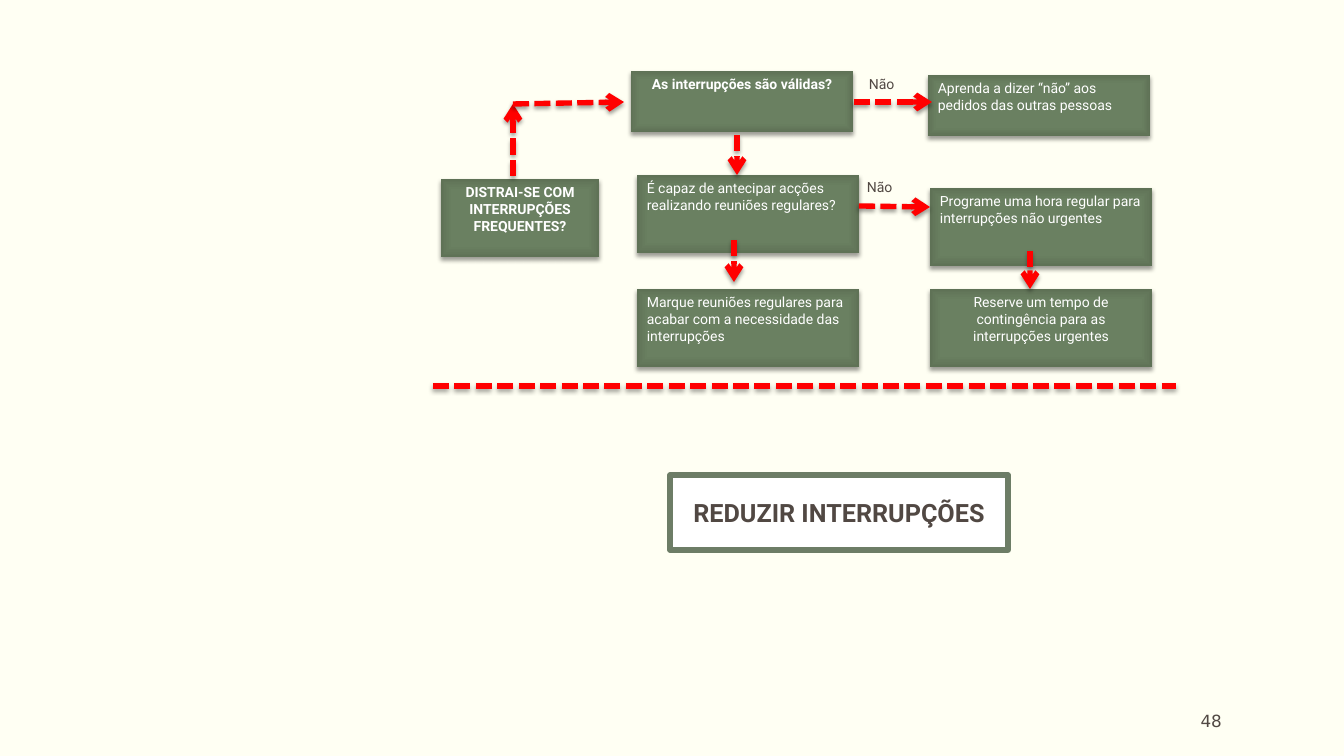
import lxml.etree
import pptx
import pptx.dml.color
import pptx.enum.dml
import pptx.enum.shapes
import pptx.enum.text
import pptx.oxml
import pptx.oxml.ns
import pptx.util

RGBColor = pptx.dml.color.RGBColor
Align = pptx.enum.text.PP_ALIGN
Anchor = pptx.enum.text.MSO_ANCHOR
qn = pptx.oxml.ns.qn

CREAM = RGBColor(0xFF, 0xFF, 0xF3)
BROWN = RGBColor(0x51, 0x48, 0x43)
WHITE = RGBColor(0xFF, 0xFF, 0xFF)
RED = RGBColor(0xFF, 0x00, 0x00)
SAGE = RGBColor(0x6D, 0x7D, 0x66)
GREEN_STOPS = (
    (0, RGBColor(0x6B, 0x81, 0x62)),
    (71, RGBColor(0x6A, 0x80, 0x61)),
    (100, RGBColor(0x5F, 0x72, 0x56)),
)

PAGE_WIDTH, PAGE_HEIGHT = 1344, 756
EMU_PER_PX = 12192000 / PAGE_WIDTH


def px(length):
    return pptx.util.Emu(round(length * EMU_PER_PX))


def write(frame, text, size=10, font="Roboto", color=WHITE, bold=False,
          align=Align.LEFT, anchor=Anchor.TOP, wrap=True):
    frame.word_wrap = wrap
    frame.vertical_anchor = anchor
    para = frame.paragraphs[0]
    para.alignment = align
    span = para.add_run()
    span.text = text
    span.font.size = pptx.util.Pt(size)
    span.font.name = font
    span.font.bold = bold
    span.font.color.rgb = color


def add_shadow(properties):
    effects = properties.find(qn("a:effectLst"))
    if effects is None:
        effects = lxml.etree.SubElement(properties, qn("a:effectLst"))
    shadow = lxml.etree.SubElement(
        effects, qn("a:outerShdw"), blurRad="39370", dist="25400",
        dir="5400000", rotWithShape="0")
    color = lxml.etree.SubElement(shadow, qn("a:srgbClr"), val="000000")
    lxml.etree.SubElement(color, qn("a:alpha"), val="38000")


def green_gradient():
    stops = "".join(
        f'<a:gs pos="{place * 1000}"><a:srgbClr val="{color}"/></a:gs>'
        for place, color in GREEN_STOPS)
    return pptx.oxml.parse_xml(
        f'<a:gradFill {pptx.oxml.ns.nsdecls("a")} rotWithShape="1">'
        f'<a:gsLst>{stops}</a:gsLst><a:path path="rect">'
        '<a:fillToRect l="50000" t="50000" r="50000" b="50000"/>'
        '</a:path></a:gradFill>')


class FlowSlide:
    """Draws the parts of the flowchart on one page in a shared style."""

    def __init__(self, deck):
        self.page = deck.slides.add_slide(deck.slide_layouts[6])
        self.page.background.fill.solid()
        self.page.background.fill.fore_color.rgb = CREAM

    def rectangle(self, *place):
        box = self.page.shapes.add_shape(
            pptx.enum.shapes.MSO_SHAPE.RECTANGLE, *map(px, place))
        box.shadow.inherit = False
        return box

    def step(self, text, left, top, width=222, height=78, **style):
        box = self.rectangle(left, top, width, height)
        box.line.fill.background()
        properties = box._element.spPr
        properties.find(qn("a:prstGeom")).addnext(green_gradient())
        add_shadow(properties)
        write(box.text_frame, text, **style)

    def title(self, text, *place):
        box = self.rectangle(*place)
        box.fill.solid()
        box.fill.fore_color.rgb = WHITE
        box.line.color.rgb = SAGE
        box.line.width = pptx.util.Pt(3.78)
        write(box.text_frame, text, size=18, color=BROWN, bold=True,
              align=Align.CENTER, anchor=Anchor.MIDDLE)

    def dashes(self, x1, y1, x2, y2, arrow=True):
        line = self.page.shapes.add_connector(
            pptx.enum.shapes.MSO_CONNECTOR.STRAIGHT,
            *map(px, (x1, y1, x2, y2)))
        line.line.color.rgb = RED
        line.line.width = pptx.util.Pt(3.82)
        line.line.dash_style = pptx.enum.dml.MSO_LINE.SQUARE_DOT
        properties = line._element.spPr
        if arrow:
            lxml.etree.SubElement(
                properties.find(qn("a:ln")), qn("a:tailEnd"), type="arrow")
        add_shadow(properties)

    def label(self, text, *place, inset=10, **style):
        box = self.page.shapes.add_textbox(*map(px, place))
        box.text_frame.margin_left = box.text_frame.margin_right = px(inset)
        write(box.text_frame, text, color=BROWN, **style)


def main():
    deck = pptx.Presentation()
    deck.slide_width, deck.slide_height = px(PAGE_WIDTH), px(PAGE_HEIGHT)
    flow = FlowSlide(deck)

    flow.label("48", 1020, 701, 202, 40, inset=0, size=12,
               font="DejaVu Sans", align=Align.RIGHT, anchor=Anchor.MIDDLE)

    flow.step("DISTRAI-SE COM INTERRUPÇÕES FREQUENTES?", 441, 179, width=158,
              bold=True, align=Align.CENTER)
    flow.step("As interrupções são válidas?", 631, 71, height=61,
              bold=True, align=Align.CENTER)
    flow.step("Aprenda a dizer “não” aos pedidos das outras pessoas",
              928, 75, height=61)
    flow.step("É capaz de antecipar acções realizando reuniões regulares?",
              637, 175)
    flow.step("Marque reuniões regulares para acabar com a necessidade das "
              "interrupções", 637, 289)
    flow.step("Programe uma hora regular para interrupções não urgentes",
              930, 188)
    flow.step("Reserve um tempo de contingência para as interrupções urgentes",
              930, 289, align=Align.CENTER)

    for arrow in (
        (737, 135, 737, 175),
        (734, 240, 734, 282),
        (1030, 251, 1030, 289),
        (854, 102, 932, 102),
        (859, 206, 930, 207),
        (513, 176, 513, 104),
        (513, 104, 624, 102),
    ):
        flow.dashes(*arrow)
    flow.dashes(433, 386, 1176, 386, arrow=False)

    for left, top in ((859, 71), (857, 174)):
        flow.label("Não", left, top, 48, 27, wrap=False)

    flow.title("REDUZIR INTERRUPÇÕES", 670, 475, 338, 75)
    deck.save("out.pptx")


if __name__ == "__main__":
    main()
